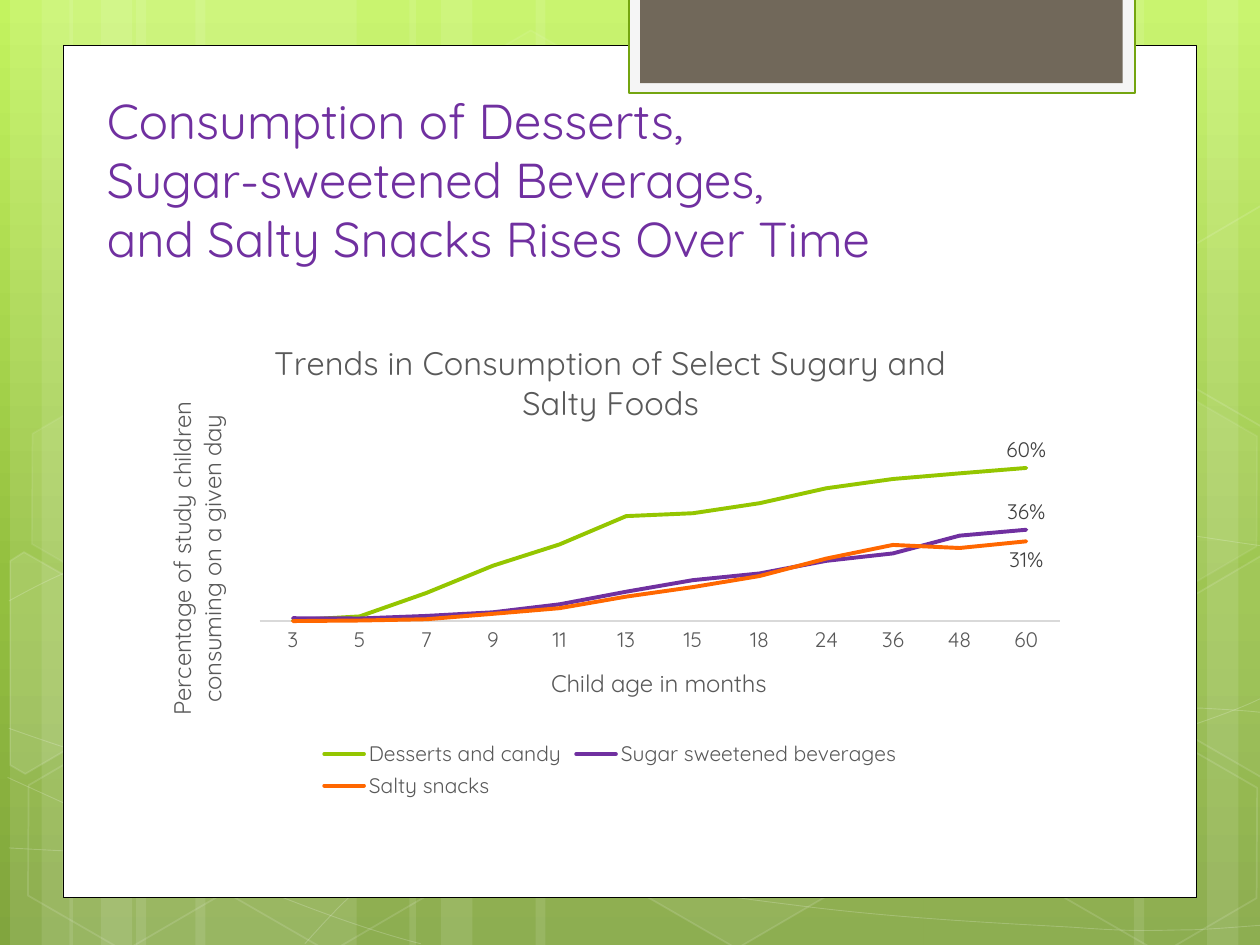
import copy
import math

import pptx
import pptx.chart.data
import pptx.dml.color
import pptx.enum.chart
import pptx.enum.shapes
import pptx.enum.text
import pptx.oxml
import pptx.oxml.ns
import pptx.util
from pptx.util import Inches

RGBColor = pptx.dml.color.RGBColor
qn = pptx.oxml.ns.qn
WHITE = RGBColor(0xFF, 0xFF, 0xFF)
BLACK = RGBColor(0, 0, 0)
PALE = RGBColor(0xF5, 0xF5, 0xF5)
TAUPE = RGBColor(0x71, 0x68, 0x5A)
EDGE_GREEN = RGBColor(0x74, 0xA5, 0x10)
PURPLE = RGBColor(0x70, 0x30, 0xA0)
LIME = RGBColor(0x94, 0xC6, 0x00)
ORANGE = RGBColor(0xFF, 0x67, 0x00)
GREY = RGBColor(0x59, 0x59, 0x59)
LABEL_GREY = RGBColor(0x40, 0x40, 0x40)
AXIS_GREY = RGBColor(0xD9, 0xD9, 0xD9)
GRADIENT = [(0, RGBColor(0xC3, 0xF3, 0x5F)), (0.62, RGBColor(0x93, 0xBF, 0x3F)),
            (1, RGBColor(0x81, 0xA5, 0x3E))]
FONT = "Quicksand"
SHAPES = pptx.enum.shapes.MSO_SHAPE

STRIPS = [(1.08, 1.75), (0.08, 0.5), (0.33, 0.83), (1.55, 1.75), (0.55, 0.5), (0.8, 0.83),
          (7.33, 1.75), (9.58, 0.5), (9, 0.83), (4.25, 3.08), (3.25, 0.5), (3.5, 0.83)]
CURVES = [
    [(0.07, 6.73), (0.61, 6.76), (1.15, 6.79), (1.9, 6.78), (2.65, 6.77), (3.58, 6.75),
     (4.58, 6.65), (5.58, 6.55), (7, 6.36), (7.92, 6.17), (8.83, 5.98), (9.77, 5.68),
     (10.07, 5.51)],
    [(0.07, 4.77), (0.36, 4.61), (0.65, 4.46), (1.21, 4.31), (1.78, 4.16), (2.59, 3.94),
     (3.47, 3.87), (4.36, 3.8), (5.44, 3.79), (6.54, 3.87), (7.64, 3.95), (9.47, 4.26),
     (10.07, 4.34)],
    [(0.06, 6.17), (1.27, 6.72), (2.47, 7.27), (3.34, 7.49)],
    [(0.07, 5.78), (0.38, 5.89), (0.7, 6), (1.28, 6.16), (1.86, 6.31), (2.73, 6.56),
     (3.57, 6.73), (4.4, 6.9), (5.45, 7.08), (6.28, 7.18), (7.11, 7.29), (8, 7.33),
     (8.53, 7.36), (9.05, 7.4), (9.19, 7.38), (9.45, 7.38), (9.71, 7.37), (9.89, 7.35),
     (10.07, 7.34)],
    [(2.42, 7.49), (2.6, 7.29), (2.78, 7.09), (3.02, 6.91), (3.26, 6.73), (3.6, 6.53),
     (3.88, 6.39), (4.16, 6.25), (4.33, 6.19), (4.7, 6.09), (5.06, 5.99), (5.73, 5.85),
     (6.08, 5.78), (6.44, 5.71), (6.49, 5.71), (6.8, 5.69), (7.11, 5.66), (7.6, 5.63),
     (7.94, 5.62), (8.29, 5.61), (8.86, 5.62), (8.86, 5.62), (9.08, 5.62), (9.31, 5.62),
     (9.53, 5.62), (9.71, 5.63), (9.88, 5.64), (9.97, 5.65), (10.06, 5.66), (10.03, 5.65),
     (10.06, 5.66)],
]
HEXAGONS = [(3.34, 0.36, 4, 8), (4.97, 5.89, 6, 12), (0.11, 5.91, 0, 12), (0.14, 3.12, 7, 8),
            (1.74, 5.92, 0, 12), (7.53, 4.53, 10, 12), (8.34, 5.93, 0, 12), (8.34, 3.14, 7, 8)]
CUT_HEXAGONS = [
    ((0.36, 5.35), 10,
     [(0.08, 4.45), (0.19, 4.38), (0.96, 4.82), (0.95, 5.7), (0.2, 6.14), (0.08, 6.07)]),
    ((9.85, 5.2), 4,
     [(9.26, 4.85), (10.01, 4.41), (10.09, 4.46), (10.09, 6.13), (10.02, 6.17), (9.26, 5.73)]),
    ((9.85, 2.41), 0,
     [(9.26, 2.07), (10.01, 1.63), (10.1, 1.68), (10.09, 3.35), (10.02, 3.39), (9.26, 2.95)]),
]
TILT = 30

TITLE_LINES = ["Consumption of Desserts, ", "Sugar-sweetened Beverages, ",
               "and Salty Snacks Rises Over Time"]
MONTHS = ["3", "5", "7", "9", "11", "13", "15", "18", "24", "36", "48", "60"]
ABOVE = pptx.enum.chart.XL_LABEL_POSITION.ABOVE
BELOW = pptx.enum.chart.XL_LABEL_POSITION.BELOW
SERIES = [
    ("Desserts and candy", LIME, ABOVE,
     [0.003, 0.018, 0.109, 0.215, 0.298, 0.408, 0.419, 0.458, 0.516, 0.552, 0.574, 0.595]),
    ("Sugar sweetened beverages", PURPLE, ABOVE,
     [0.011, 0.01, 0.02, 0.034, 0.065, 0.114, 0.159, 0.185, 0.234, 0.263, 0.332, 0.355]),
    ("Salty snacks", ORANGE, BELOW,
     [0, 0.002, 0.007, 0.028, 0.05, 0.095, 0.132, 0.175, 0.243, 0.296, 0.284, 0.31]),
]


def set_opacity(fill, container, percent):
    fill.solid()
    fill.fore_color.rgb = WHITE
    color = container.find(qn("a:solidFill"))[0]
    color.append(color.makeelement(qn("a:alpha"), {"val": str(percent * 1000)}))


def style_glass(shape, fill_percent, line_percent, line_width=1):
    shape.shadow.inherit = False
    properties = shape._element.spPr
    if fill_percent:
        set_opacity(shape.fill, properties, fill_percent)
    else:
        shape.fill.background()
    if line_percent:
        shape.line.width = pptx.util.Pt(line_width)
        set_opacity(shape.line.fill, properties.find(qn("a:ln")), line_percent)
    else:
        shape.line.fill.background()


def add_outline(slide, points, close):
    scaled = [(Inches(x), Inches(y)) for x, y in points]
    builder = slide.shapes.build_freeform(*scaled[0])
    builder.add_line_segments(scaled[1:], close=close)
    return builder.convert_to_shape()


def add_curve(slide, controls):
    shape = add_outline(slide, controls, False)
    segments = list(shape._element.iter(qn("a:lnTo")))
    for start in range(0, len(segments), 3):
        bezier = segments[start].makeelement(qn("a:cubicBezTo"), {})
        segments[start].addprevious(bezier)
        for segment in segments[start:start + 3]:
            bezier.append(segment[0])
            segment.getparent().remove(segment)
    return shape


def level_point(point, center):
    angle = math.radians(-TILT)
    x, y = point[0] - center[0], point[1] - center[1]
    return (center[0] + x * math.cos(angle) - y * math.sin(angle),
            center[1] + x * math.sin(angle) + y * math.cos(angle))


def add_backdrop(slide, height):
    fill = slide.background.fill
    fill.gradient()
    fill.gradient_angle = 270
    stop_list = next(slide._element.iter(qn("a:gsLst")))
    stop_list.append(copy.deepcopy(stop_list[-1]))
    for stop, (position, color) in zip(fill.gradient_stops, GRADIENT):
        stop.position = position
        stop.color.rgb = color
    for left, width in STRIPS:
        strip = slide.shapes.add_shape(SHAPES.RECTANGLE, Inches(left), 0, Inches(width), height)
        style_glass(strip, 10, 0)
    for controls in CURVES:
        style_glass(add_curve(slide, controls), 0, 20, 0.5)
    for left, top, fill_percent, line_percent in HEXAGONS:
        hexagon = slide.shapes.add_shape(SHAPES.HEXAGON, Inches(left), Inches(top),
                                         Inches(1.75), Inches(1.52))
        hexagon.rotation = TILT
        hexagon.adjustments[0] = 0.285
        hexagon.adjustments[1] = 1.155
        style_glass(hexagon, fill_percent, line_percent)
    for center, fill_percent, points in CUT_HEXAGONS:
        hexagon = add_outline(slide, [level_point(point, center) for point in points], True)
        hexagon.rotation = TILT
        style_glass(hexagon, fill_percent, 12)


def add_panel(slide, left, top, width, height, color, line_color=None, line_width=0):
    panel = slide.shapes.add_shape(SHAPES.RECTANGLE, left, top, width, height)
    panel.shadow.inherit = False
    panel.fill.solid()
    panel.fill.fore_color.rgb = color
    if line_color is None:
        panel.line.fill.background()
    else:
        panel.line.color.rgb = line_color
        panel.line.width = pptx.util.Pt(line_width)


def add_card(slide, left, top, width, height):
    add_panel(slide, left, top, width, height, WHITE, BLACK, 0.5)
    tab_left, tab_top = left + Inches(4.49), top - Inches(0.38)
    add_panel(slide, tab_left, tab_top, Inches(4.02), Inches(0.76), PALE, EDGE_GREEN, 1.25)
    add_panel(slide, tab_left + Inches(0.09), tab_top, Inches(3.83), Inches(0.68), TAUPE)


def style_font(font, size, color):
    font.name = FONT
    font.size = pptx.util.Pt(size)
    font.color.rgb = color
    font.bold = False


def add_title(slide, left, top, width, height):
    frame = slide.shapes.add_textbox(left, top, width, height).text_frame
    frame.word_wrap = True
    frame.vertical_anchor = pptx.enum.text.MSO_ANCHOR.BOTTOM
    paragraph = frame.paragraphs[0]
    for index, line in enumerate(TITLE_LINES):
        if index:
            paragraph.add_line_break()
        run = paragraph.add_run()
        run.text = line
        style_font(run.font, 28, PURPLE)


def set_layout(element, before, box, *lengths):
    for old in element.findall(qn("c:layout")):
        element.remove(old)
    inner = '<c:layoutTarget val="inner"/>' if before is None else ""
    sizes = "".join(f'<c:{name} val="{Inches(length) / side}"/>'
                    for name, length, side in zip("xywh", lengths, box * 2))
    layout = pptx.oxml.parse_xml(
        f'<c:layout {pptx.oxml.ns.nsdecls("c")}><c:manualLayout>{inner}'
        f'<c:xMode val="edge"/><c:yMode val="edge"/>{sizes}</c:manualLayout></c:layout>')
    if before is None:
        element.insert(0, layout)
    else:
        element.find(qn(before)).addnext(layout)


def write_chart_title(title, lines, size, box, x, y):
    frame = title.text_frame
    for index, line in enumerate(lines):
        paragraph = frame.add_paragraph() if index else frame.paragraphs[0]
        run = paragraph.add_run()
        run.text = line
        style_font(run.font, size, GREY)
    set_layout(title._element, "c:tx", box, x, y)


def add_trend_chart(slide, left, top, width, height):
    box = (width, height)
    data = pptx.chart.data.CategoryChartData(number_format="0%")
    data.categories = MONTHS
    for name, color, position, values in SERIES:
        data.add_series(name, values)
    chart = slide.shapes.add_chart(pptx.enum.chart.XL_CHART_TYPE.LINE, left, top, width, height,
                                   data).chart
    style_font(chart.font, 12, GREY)
    chart.has_title = True
    write_chart_title(chart.chart_title,
                      ["Trends in Consumption of Select Sugary and Salty Foods"],
                      18.6, box, 0.99, 0.1)
    months, share = chart.category_axis, chart.value_axis
    write_chart_title(months.axis_title, ["Child age in months"], 13.7, box, 3.2, 2.71)
    write_chart_title(share.axis_title,
                      ["Percentage of study children", "consuming on a given day"],
                      13.7, box, 0.14, 0.62)
    months.major_tick_mark = pptx.enum.chart.XL_TICK_MARK.NONE
    months.format.line.color.rgb = AXIS_GREY
    months.format.line.width = pptx.util.Pt(0.75)
    share.minimum_scale, share.maximum_scale = 0, 0.7
    share.has_major_gridlines = False
    share.visible = False
    chart.has_legend = True
    chart.legend.position = pptx.enum.chart.XL_LEGEND_POSITION.BOTTOM
    chart.legend.include_in_layout = False
    style_font(chart.legend.font, 12, GREY)
    set_layout(chart.legend._element, "c:legendPos", box, 1.37, 3.3, 4.67, 0.54)
    set_layout(chart._chartSpace.chart.plotArea, None, box, 0.92, 0.96, 6.35, 1.43)
    chart.plots[0].vary_by_categories = False
    for series, (name, color, position, values) in zip(chart.plots[0].series, SERIES):
        series.smooth = False
        series.format.line.color.rgb = color
        series.format.line.width = pptx.util.Pt(2.25)
        next(series._element.iter(qn("a:ln"))).set("cap", "rnd")
        series.marker.style = pptx.enum.chart.XL_MARKER_STYLE.NONE
        label = series.points[len(values) - 1].data_label
        style_font(label.font, 12, LABEL_GREY)
        label.position = position


def main():
    presentation = pptx.Presentation()
    presentation.slide_width, presentation.slide_height = Inches(10), Inches(7.5)
    slide = presentation.slides.add_slide(presentation.slide_layouts[6])
    add_backdrop(slide, presentation.slide_height)
    add_card(slide, Inches(0.5), Inches(0.36), Inches(9), Inches(6.76))
    add_title(slide, Inches(0.75), Inches(0.75), Inches(8.88), Inches(1.42))
    add_trend_chart(slide, Inches(1.14), Inches(2.54), Inches(7.41), Inches(3.84))
    presentation.save("out.pptx")


if __name__ == "__main__":
    main()
